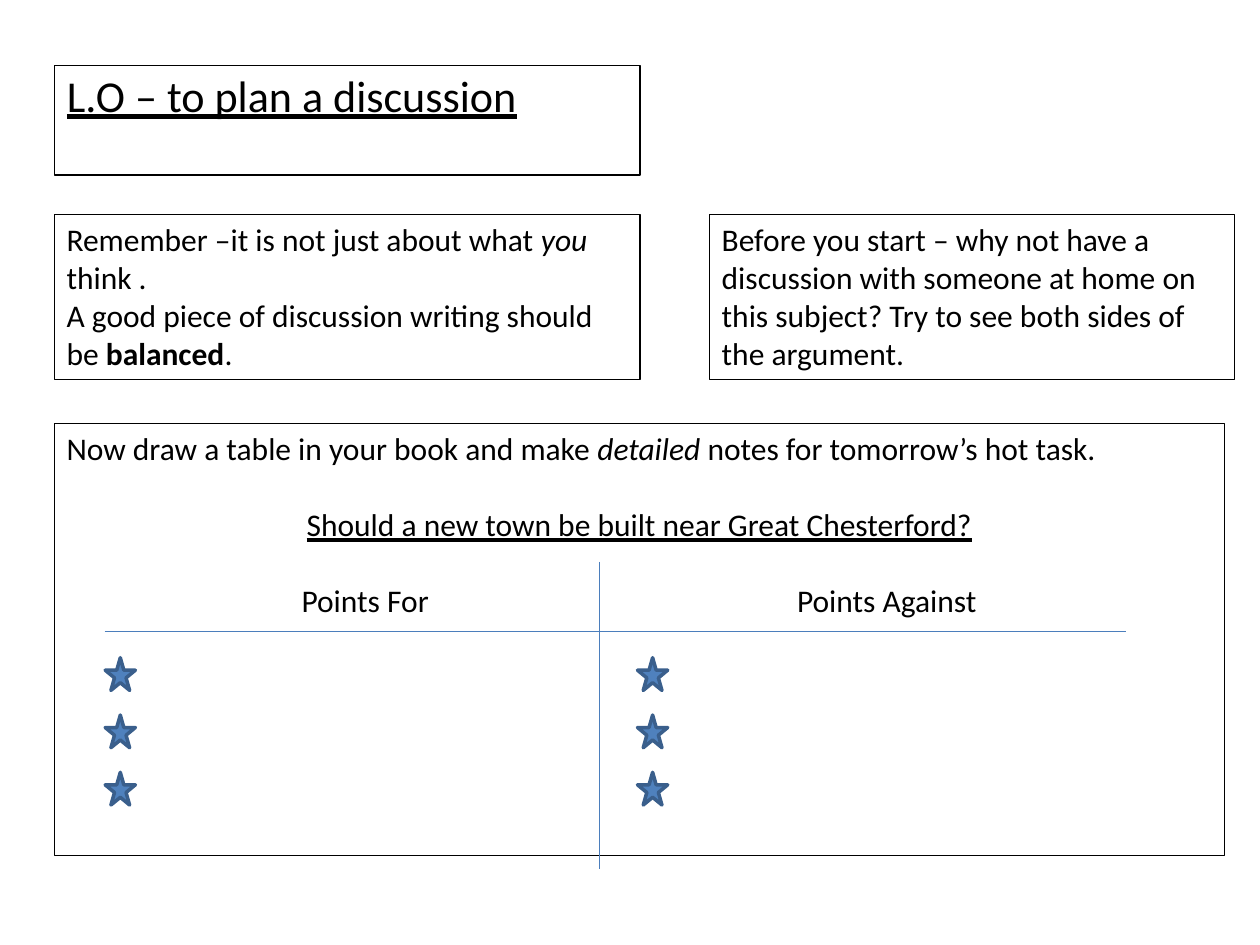
import pptx
import pptx.dml.color
import pptx.enum.shapes
import pptx.enum.text
import pptx.oxml
import pptx.oxml.ns
import pptx.util

BLACK = pptx.dml.color.RGBColor(0x00, 0x00, 0x00)
RULE_BLUE = pptx.dml.color.RGBColor(0x4B, 0x7E, 0xBC)
STAR_FILL = pptx.dml.color.RGBColor(0x4F, 0x81, 0xBD)
STAR_EDGE = pptx.dml.color.RGBColor(0x3A, 0x5F, 0x8C)
COLUMNS, ROWS = 100, 75


class Worksheet:
    """Draws styled elements on one slide, placed in columns and rows of a 100 by 75 grid."""

    font_name = "Calibri"
    text_size = 18
    title_size = 25.2
    thin = pptx.util.Pt(0.75)

    def __init__(self, deck):
        self.column = deck.slide_width / COLUMNS
        self.row = deck.slide_height / ROWS
        self.slide = deck.slides.add_slide(deck.slide_layouts[5])

    def cells(self, left, top, width, height):
        return (round(left * self.column), round(top * self.row),
                round(width * self.column), round(height * self.row))

    def frame(self, box):
        box.line.color.rgb = BLACK
        box.line.width = self.thin
        text = box.text_frame
        text.word_wrap = True
        text.auto_size = pptx.enum.text.MSO_AUTO_SIZE.NONE
        text.vertical_anchor = pptx.enum.text.MSO_ANCHOR.TOP
        return text

    def add_runs(self, paragraph, runs, size):
        for words, *styles in runs:
            run = paragraph.add_run()
            run.text = words
            run.font.name = self.font_name
            run.font.size = pptx.util.Pt(size)
            run.font.color.rgb = BLACK
            run.font.bold = "bold" in styles
            run.font.italic = "italic" in styles
            run.font.underline = "underline" in styles

    def title(self, place, words):
        heading = self.slide.shapes.title
        heading.left, heading.top, heading.width, heading.height = self.cells(*place)
        text = self.frame(heading)
        text.margin_top = pptx.util.Inches(0.02)
        paragraph = text.paragraphs[0]
        paragraph.alignment = pptx.enum.text.PP_ALIGN.LEFT
        self.add_runs(paragraph, [(words, "underline")], self.title_size)

    def note(self, place, *lines):
        text = self.frame(self.slide.shapes.add_textbox(*self.cells(*place)))
        for index, runs in enumerate(lines):
            paragraph = text.add_paragraph() if index else text.paragraphs[0]
            self.add_runs(paragraph, runs, self.text_size)
        return text.paragraphs

    def centre_tabs(self, paragraph, stops):
        properties = paragraph._p.get_or_add_pPr()
        tabs = properties.makeelement(pptx.oxml.ns.qn("a:tabLst"), {})
        properties.append(tabs)
        for stop in stops:
            tab = tabs.makeelement(pptx.oxml.ns.qn("a:tab"),
                                   {"pos": str(round(stop * self.column)), "algn": "ctr"})
            tabs.append(tab)

    def rule(self, start, end):
        line = self.slide.shapes.add_connector(
            pptx.enum.shapes.MSO_CONNECTOR.STRAIGHT,
            *self.cells(*start, *end))
        line.line.color.rgb = RULE_BLUE
        line.line.width = self.thin
        properties = line._element.spPr
        properties.append(properties.makeelement(pptx.oxml.ns.qn("a:effectLst"), {}))

    def star(self, left, top):
        star = self.slide.shapes.add_shape(
            pptx.enum.shapes.MSO_SHAPE.STAR_5_POINT, *self.cells(left, top, 2.4, 2.6))
        star.shadow.inherit = False
        star.fill.solid()
        star.fill.fore_color.rgb = STAR_FILL
        star.line.color.rgb = STAR_EDGE
        star.line.width = pptx.util.Pt(2)


def main():
    deck = pptx.Presentation()
    deck.slide_width = pptx.util.Inches(10)
    deck.slide_height = pptx.util.Inches(7.5)
    sheet = Worksheet(deck)

    sheet.title((4.3, 5.2, 46.5, 8.7), "L.O – to plan a discussion")
    sheet.note((56.3, 17, 41.7, 13.1),
               [("Before you start – why not have a discussion with someone at home on "
                 "this subject? Try to see both sides of the argument.",)])
    sheet.note((4.3, 17, 46.5, 13.1),
               [("Remember –it is not just about what ",), ("you ", "italic"), ("think .",)],
               [("A good piece of discussion writing should be ",),
                ("balanced", "bold"), (".",)])
    task, question, headings = sheet.note(
        (4.3, 33.6, 92.9, 34.3),
        [("Now draw a table in your book and make ",), ("detailed", "italic"),
         (" notes for tomorrow’s hot task.",)],
        [("Should a new town be built near Great Chesterford?", "underline")],
        [("\tPoints For\tPoints Against",)])
    question.alignment = pptx.enum.text.PP_ALIGN.CENTER
    sheet.centre_tabs(headings, (23.7, 65.1))
    for paragraph in (question, headings):
        paragraph.space_before = pptx.util.Pt(21.6)

    sheet.rule((8.3, 50.1), (89.4, 50.1))
    sheet.rule((47.6, 44.6), (47.6, 69))
    for left in (8.35, 50.6):
        for point in range(3):
            sheet.star(left, 52.2 + 4.55 * point)

    deck.save("out.pptx")


if __name__ == "__main__":
    main()
